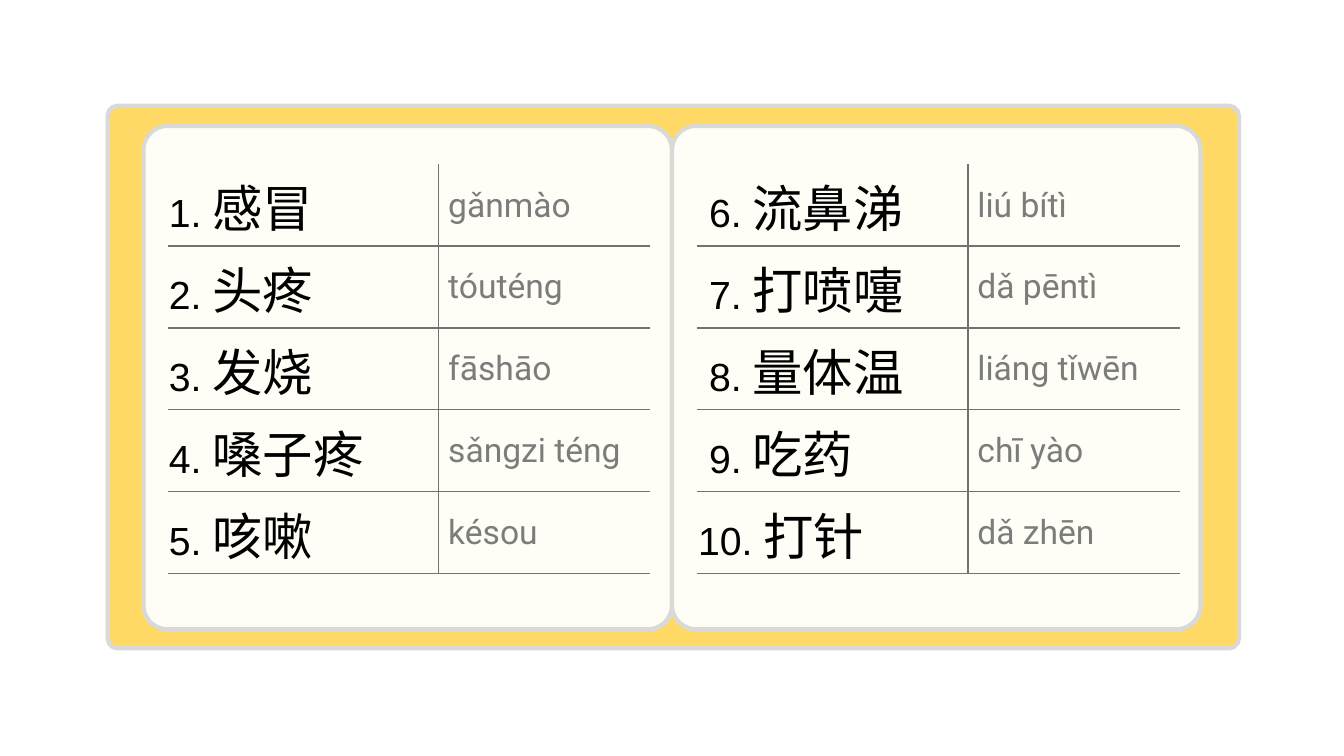
from lxml.etree import SubElement
from pptx import Presentation
from pptx.dml.color import RGBColor
from pptx.enum.shapes import MSO_SHAPE
from pptx.enum.text import MSO_ANCHOR
from pptx.oxml.ns import qn
from pptx.util import Pt

COLORS = {
    "cover": "FFD966", "page": "FFFEF6", "edge": "D9D9D9", "rule": "767171",
    "white": "FFFFFF", "word": "000000", "pinyin": "7C7C7C",
}
ROW_HEIGHT = 58.5
COLUMN_WIDTHS = (193.5, 151)
NUMBER_INDENT = 7.8


def add_run(text, paragraph, font, size, color):
    run = paragraph.add_run()
    run.text = text
    run.font.name = font
    run.font.size = Pt(size)
    run.font.color.rgb = RGBColor.from_string(COLORS[color])
    SubElement(run.font._element, qn("a:ea"), typeface=font)


def set_border(cell, position, side, color):
    line = cell._tc.get_or_add_tcPr().makeelement(qn(f"a:ln{side}"), {"w": str(Pt(1))})
    cell._tc.tcPr.insert(position, line)
    if color:
        fill = SubElement(line, qn("a:solidFill"))
        SubElement(fill, qn("a:srgbClr"), val=COLORS[color])
    else:
        SubElement(line, qn("a:noFill"))


presentation = Presentation()
presentation.slide_width, presentation.slide_height = Pt(960), Pt(540)
slide = presentation.slides.add_slide(presentation.slide_layouts[6])

# Notebook cover and its two pages
for left, top, width, height, corner, color in (
    (77, 75.6, 808, 387.5, 0.018, "cover"),
    (102.5, 90, 377.5, 359.5, 0.048, "page"),
    (480, 90, 377.5, 359.5, 0.048, "page"),
):
    shape = slide.shapes.add_shape(
        MSO_SHAPE.ROUNDED_RECTANGLE, Pt(left), Pt(top), Pt(width), Pt(height))
    shape.adjustments[0] = corner
    shape.shadow.inherit = False
    shape.fill.solid()
    shape.fill.fore_color.rgb = RGBColor.from_string(COLORS[color])
    shape.line.color.rgb = RGBColor.from_string(COLORS["edge"])
    shape.line.width = Pt(3)

# Word lists: left edge, first number, outer border colour, entries
word_lists = (
    (120, 1, None, (
        ("感冒", "ɡǎnmào"), ("头疼", "tóuténɡ"), ("发烧", "fāshāo"),
        ("嗓子疼", "sǎnɡzi ténɡ"), ("咳嗽", "késou"))),
    (498, 6, "white", (
        ("流鼻涕", "liú bítì"), ("打喷嚏", "dǎ pēntì"), ("量体温", "liánɡ tǐwēn"),
        ("吃药", "chī yào"), ("打针", "dǎ zhēn"))),
)
for left, first_number, outer, entries in word_lists:
    table = slide.shapes.add_table(
        len(entries), 2, Pt(left), Pt(117.3),
        Pt(sum(COLUMN_WIDTHS)), Pt(ROW_HEIGHT * len(entries))).table
    table.first_row = table.horz_banding = False
    for column, width in zip(table.columns, COLUMN_WIDTHS):
        column.width = Pt(width)

    for index, (word, pinyin) in enumerate(entries):
        table.rows[index].height = Pt(ROW_HEIGHT)
        number = first_number + index
        word_cell, pinyin_cell = table.rows[index].cells

        # Cell fill, margins and borders
        top = "rule" if index else outer
        indent = NUMBER_INDENT if 6 <= number <= 9 else 0
        for cell, margin, left_color, right_color in (
            (word_cell, 0.7 + indent, outer, "rule"),
            (pinyin_cell, 6.7, "rule", outer),
        ):
            cell.fill.background()
            cell.vertical_anchor = MSO_ANCHOR.MIDDLE
            cell.margin_left = Pt(margin)
            cell.margin_right = cell.margin_top = Pt(0.7)
            cell.margin_bottom = 0
            borders = (("L", left_color), ("R", right_color), ("T", top), ("B", "rule"))
            for position, (side, color) in enumerate(borders):
                set_border(cell, position, side, color)

        # Number, word and pinyin
        paragraph = word_cell.text_frame.paragraphs[0]
        add_run(f"{number}. ", paragraph, font="Arial", size=28, color="word")
        add_run(word, paragraph, font="Noto Sans CJK SC", size=36, color="word")
        add_run(pinyin, pinyin_cell.text_frame.paragraphs[0],
                font="Roboto", size=24, color="pinyin")

presentation.save("out.pptx")
